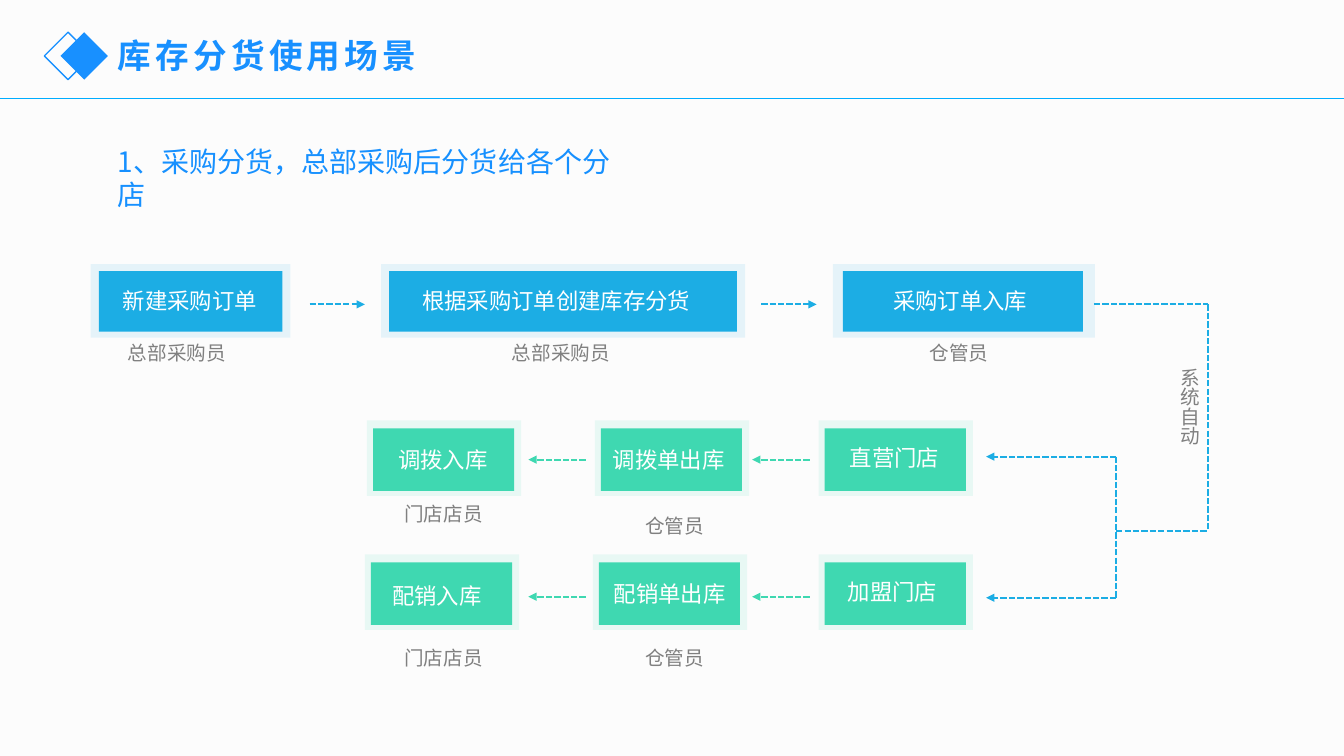
"""Build the slide that shows how purchased stock is distributed to branches."""
from dataclasses import dataclass

from lxml import etree
from pptx import Presentation
from pptx.dml.color import RGBColor
from pptx.enum.dml import MSO_LINE
from pptx.enum.shapes import MSO_CONNECTOR, MSO_SHAPE
from pptx.enum.text import MSO_ANCHOR, MSO_AUTO_SIZE, PP_ALIGN
from pptx.oxml.ns import qn
from pptx.util import Inches, Pt

RECTANGLE = MSO_SHAPE.RECTANGLE
DIAMOND = MSO_SHAPE.DIAMOND
STRAIGHT = MSO_CONNECTOR.STRAIGHT
DASH = MSO_LINE.SQUARE_DOT
MIDDLE = MSO_ANCHOR.MIDDLE
FIXED_SIZE = MSO_AUTO_SIZE.NONE
LEFT = PP_ALIGN.LEFT


@dataclass(frozen=True)
class Theme:
    """Hold the colours, font and type sizes."""
    font: str = "Noto Sans CJK SC"
    background: str = "FCFCFC"
    title: str = "1890FF"
    heading: str = "1690FF"
    rule: str = "00ADFF"
    purchase: str = "1CADE4"
    branch: str = "3FD8B1"
    role: str = "808080"
    on_fill: str = "FFFFFF"
    title_size: int = 24
    heading_size: int = 20
    step_size: int = 16
    role_size: int = 14
    halo_opacity: int = 10


def write(frame, text, *, font, size, color, bold=False, wrap=False,
          spacing=0, leading=None):
    """Put formatted text into a text frame."""
    frame.auto_size = FIXED_SIZE
    frame.word_wrap = wrap
    frame.vertical_anchor = MIDDLE
    paragraph = frame.paragraphs[0]
    paragraph.alignment = LEFT
    if leading:
        paragraph.line_spacing = Pt(leading)
    run = paragraph.add_run()
    run.text = text
    run.font.size = Pt(size)
    run.font.bold = bold
    run.font.color.rgb = RGBColor.from_string(color)
    run.font.name = font
    properties = run.font._element
    etree.SubElement(properties, qn("a:ea")).set("typeface", font)
    if spacing:
        properties.set("spc", str(spacing * 100))


class FlowSlide:
    """Draw the elements of a flow slide in one style."""

    def __init__(self, presentation, theme):
        """Add a title-only slide with the theme background."""
        self.theme = theme
        self.slide = presentation.slides.add_slide(presentation.slide_layouts[5])
        fill = self.slide.background.fill
        fill.solid()
        fill.fore_color.rgb = RGBColor.from_string(theme.background)

    def title(self, text, left, top, width, height):
        """Place and format the title placeholder."""
        title = self.slide.shapes.title
        title.left, title.top = Inches(left), Inches(top)
        title.width, title.height = Inches(width), Inches(height)
        write(title.text_frame, text, font=self.theme.font, size=self.theme.title_size,
              color=self.theme.title, bold=True, wrap=True, spacing=3)

    def block(self, kind, left, top, width, height, fill=None, outline=None, opacity=100):
        """Draw a filled or outlined preset shape."""
        shape = self.slide.shapes.add_shape(
            kind, Inches(left), Inches(top), Inches(width), Inches(height))
        shape.shadow.inherit = False
        if fill:
            shape.fill.solid()
            shape.fill.fore_color.rgb = RGBColor.from_string(fill)
        else:
            shape.fill.background()
        if outline:
            shape.line.color.rgb = RGBColor.from_string(outline)
            shape.line.width = Pt(1)
        else:
            shape.line.fill.background()
        if opacity < 100:
            color = shape.fill._xPr.find(qn("a:solidFill"))[0]
            etree.SubElement(color, qn("a:alpha")).set("val", str(opacity * 1000))

    def text(self, text, left, top, width, height, vertical=False, **style):
        """Add a text box."""
        box = self.slide.shapes.add_textbox(
            Inches(left), Inches(top), Inches(width), Inches(height))
        if vertical:
            box.text_frame._txBody.bodyPr.set("vert", "eaVert")
        write(box.text_frame, text, font=self.theme.font, **style)

    def label(self, text, left, top, size, color):
        """Add a one-line label sized to its characters."""
        width = round(len(text) * size / 72 + 0.2, 2)
        height = round(size * 1.23 / 72 + 0.1, 2)
        self.text(text, left, top, width, height, size=size, color=color)

    def role(self, text, left, top):
        """Name the person who performs a step."""
        self.label(text, left, top, self.theme.role_size, self.theme.role)

    def step(self, text, text_at, halo, core, color):
        """Draw a step with its pale halo and its label."""
        self.block(RECTANGLE, *halo, fill=color, opacity=self.theme.halo_opacity)
        self.block(RECTANGLE, *core, fill=color)
        self.label(text, *text_at, self.theme.step_size, self.theme.on_fill)

    def line(self, start, end, color, width=1.5, dashed=True, arrow=False):
        """Draw a straight line or arrow."""
        line = self.slide.shapes.add_connector(
            STRAIGHT, *(Inches(value) for value in (*start, *end)))
        line.line.color.rgb = RGBColor.from_string(color)
        line.line.width = Pt(width)
        if dashed:
            line.line.dash_style = DASH
        if arrow:
            etree.SubElement(line.line._get_or_add_ln(), qn("a:tailEnd")).set("type", "triangle")
        etree.SubElement(line._element.spPr, qn("a:effectLst"))


def main():
    """Build and save the slide."""
    theme = Theme()
    presentation = Presentation()
    presentation.slide_width, presentation.slide_height = Inches(13.33), Inches(7.5)
    flow = FlowSlide(presentation, theme)

    flow.line((0, 0.98), (13.33, 0.98), theme.rule, width=1, dashed=False)
    flow.block(DIAMOND, 0.44, 0.32, 0.47, 0.47, outline=theme.title)
    flow.block(DIAMOND, 0.6, 0.32, 0.47, 0.47, fill=theme.title)
    flow.title("库存分货使用场景", 1.07, 0.3, 5.49, 0.5)
    flow.text("1、采购分货，总部采购后分货给各个分店", 1.07, 1.37, 5.35, 0.8,
              size=theme.heading_size, color=theme.heading, wrap=True, leading=23.5)

    purchase_steps = [
        ("新建采购订单", 1.12, 0.9, 1.98, 0.98, 1.82, "总部采购员", 1.17),
        ("根据采购订单创建库存分货", 4.09, 3.78, 3.61, 3.86, 3.45, "总部采购员", 4.98),
        ("采购订单入库", 8.76, 8.26, 2.6, 8.36, 2.38, "仓管员", 9.12),
    ]
    for text, text_left, halo_left, halo_width, left, width, role, role_left in purchase_steps:
        flow.step(text, (text_left, 2.8), (halo_left, 2.62, halo_width, 0.73),
                  (left, 2.69, width, 0.6), theme.purchase)
        flow.role(role, role_left, 3.33)

    branch_rows = [
        (4.17, 4.56, [("直营门店", 8.12, 8.33, 4.35), ("调拨单出库", 5.9, 5.98, 4.37),
                      ("调拨入库", 3.64, 3.85, 4.37)]),
        (5.5, 5.92, [("加盟门店", 8.12, 8.31, 5.68), ("配销单出库", 5.88, 5.99, 5.7),
                     ("配销入库", 3.62, 3.79, 5.72)]),
    ]
    for top, arrow_y, steps in branch_rows:
        for text, left, text_left, text_top in steps:
            flow.step(text, (text_left, text_top), (left, top, 1.53, 0.75),
                      (left + 0.06, top + 0.08, 1.4, 0.62), theme.branch)
        for arrow_x in (8.03, 5.81):
            flow.line((arrow_x, arrow_y), (arrow_x - 0.57, arrow_y), theme.branch, arrow=True)

    for role, left, top in [("仓管员", 6.3, 5.04), ("门店店员", 3.91, 4.93),
                            ("仓管员", 6.3, 6.35), ("门店店员", 3.91, 6.35)]:
        flow.role(role, left, top)

    for arrow_x in (3.07, 7.55):
        flow.line((arrow_x, 3.02), (arrow_x + 0.55, 3.02), theme.purchase, arrow=True)

    trunk_x, fork_x, fork_y = 11.98, 11.07, 5.27
    direct_y, franchise_y = 4.53, 5.93
    for start, end in [((10.85, 3.02), (trunk_x, 3.02)),
                       ((trunk_x, 3.02), (trunk_x, fork_y)),
                       ((fork_x, fork_y), (trunk_x, fork_y)),
                       ((fork_x, direct_y), (fork_x, franchise_y))]:
        flow.line(start, end, theme.purchase)
    for store_y in (direct_y, franchise_y):
        flow.line((fork_x, store_y), (9.78, store_y), theme.purchase, arrow=True)
    flow.text("系统自动", 11.58, 3.55, 0.44, 0.89, vertical=True,
              size=theme.role_size, color=theme.role)

    presentation.save("out.pptx")


if __name__ == "__main__":
    main()
